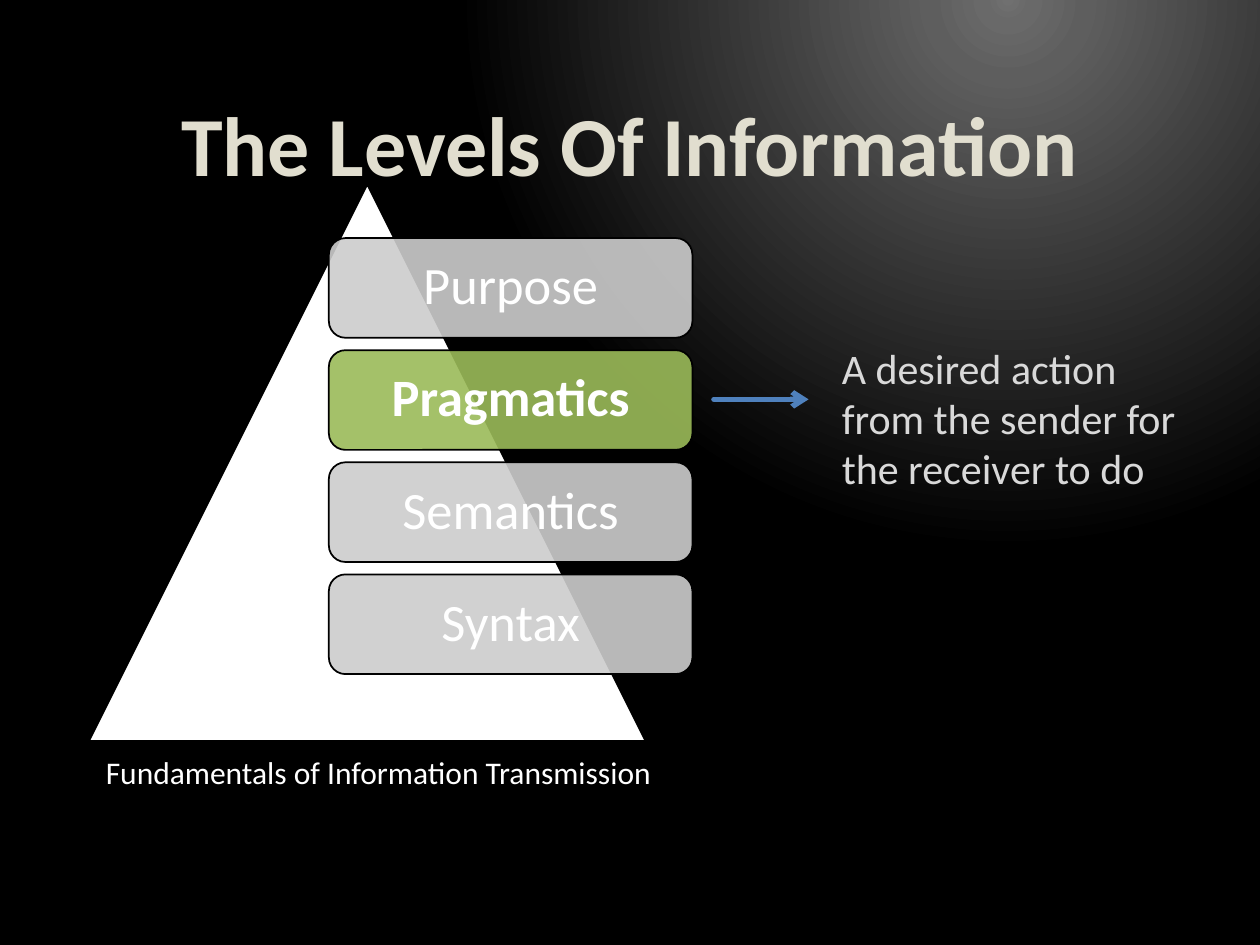
from dataclasses import dataclass

from lxml.etree import SubElement
from pptx import Presentation
from pptx.dml.color import RGBColor
from pptx.enum.shapes import MSO_CONNECTOR, MSO_SHAPE
from pptx.enum.text import MSO_ANCHOR, PP_ALIGN
from pptx.oxml import parse_xml
from pptx.oxml.ns import nsdecls, qn
from pptx.util import Cm, Pt


@dataclass(frozen=True)
class Theme:
    font: str = "Calibri"
    white: str = "FFFFFF"
    black: str = "000000"
    cream: str = "E1DECF"
    pale: str = "D9D9D9"
    gray: str = "CCCCCC"
    green: str = "9BBB59"
    blue: str = "4F81BD"
    glow: tuple = ((0, "707070"), (3, "696969"), (10, "5E5E5E"),
                   (70, "000000"), (100, "000000"))
    title: int = 48
    level: int = 30
    note: int = 24
    label: int = 18


THEME = Theme()
LEVELS = ("Purpose", "Pragmatics", "Semantics", "Syntax")
ACTIVE = "Pragmatics"


def rgb(code):
    return RGBColor.from_string(code)


def put_text(shape, text, size, color=THEME.white, bold=False,
             align=PP_ALIGN.CENTER, anchor=MSO_ANCHOR.TOP, space=None):
    frame = shape.text_frame
    frame.word_wrap = True
    frame.vertical_anchor = anchor
    par = frame.paragraphs[0]
    par.alignment = align
    par.line_spacing = space
    run = par.add_run()
    run.text = text
    font = run.font
    font.name, font.size, font.bold = THEME.font, Pt(size), bold
    font.color.rgb = rgb(color)


def add_text(slide, box, text, size, **style):
    shape = slide.shapes.add_textbox(*map(Cm, box))
    put_text(shape, text, size, **style)


def add_block(slide, kind, box, fill, width, alpha=100):
    shape = slide.shapes.add_shape(kind, *map(Cm, box))
    shape.shadow.inherit = False
    shape.fill.solid()
    shape.fill.fore_color.rgb = rgb(fill)
    if alpha < 100:
        tone = shape.element.xpath("./p:spPr/a:solidFill/a:srgbClr")[0]
        SubElement(tone, qn("a:alpha"), val=str(alpha * 1000))
    shape.line.color.rgb = rgb(THEME.black)
    shape.line.width = Pt(width)
    return shape


def add_arrow(slide, start, end):
    arrow = slide.shapes.add_connector(
        MSO_CONNECTOR.STRAIGHT, *map(Cm, start + end))
    arrow.line.color.rgb = rgb(THEME.blue)
    arrow.line.width = Pt(3)
    line = arrow.line._get_or_add_ln()
    line.set("cap", "rnd")
    SubElement(line, qn("a:tailEnd"), type="arrow")
    SubElement(arrow.element.spPr, qn("a:effectLst"))


def set_glow(slide):
    stops = "".join(
        f'<a:gs pos="{pos * 1000}"><a:srgbClr val="{color}"/></a:gs>'
        for pos, color in THEME.glow)
    slide.element.cSld.insert(0, parse_xml(
        f'<p:bg {nsdecls("p", "a")}><p:bgPr><a:gradFill rotWithShape="1">'
        f'<a:gsLst>{stops}</a:gsLst><a:path path="circle">'
        '<a:fillToRect l="60000" t="-3000" r="0" b="200000"/></a:path>'
        '</a:gradFill><a:effectLst/></p:bgPr></p:bg>'))


def add_levels(slide):
    left, top, width, height, step = 6.63, 4.8, 7.33, 2.01, 2.26
    for row, name in enumerate(LEVELS):
        active = name == ACTIVE
        block = add_block(
            slide, MSO_SHAPE.ROUNDED_RECTANGLE,
            (left, top + row * step, width, height),
            THEME.green if active else THEME.gray, 1, alpha=90)
        put_text(block, name, THEME.level, bold=active,
                 anchor=MSO_ANCHOR.MIDDLE, space=0.9)


def main():
    deck = Presentation()
    deck.slide_width, deck.slide_height = Cm(25.4), Cm(19.05)
    slide = deck.slides.add_slide(deck.slide_layouts[6])
    set_glow(slide)

    # Title and caption
    add_text(slide, (1.27, 0.84, 22.86, 3.18), "The Levels Of Information",
             THEME.title, color=THEME.cream, bold=True,
             anchor=MSO_ANCHOR.BOTTOM)
    add_text(slide, (1.06, 15.06, 13.14, 1.03),
             "Fundamentals of Information Transmission", THEME.label)

    # Pyramid with its levels
    add_block(slide, MSO_SHAPE.ISOSCELES_TRIANGLE,
              (1.76, 3.67, 11.29, 11.29), THEME.white, 2.21)
    add_levels(slide)

    # Note on the active level
    add_text(slide, (16.72, 6.77, 7.83, 3.33),
             "A desired action from the sender for the receiver to do",
             THEME.note, color=THEME.pale, align=PP_ALIGN.LEFT)
    add_arrow(slide, (14.39, 8.05), (16.3, 8.05))

    deck.save("out.pptx")


if __name__ == "__main__":
    main()
